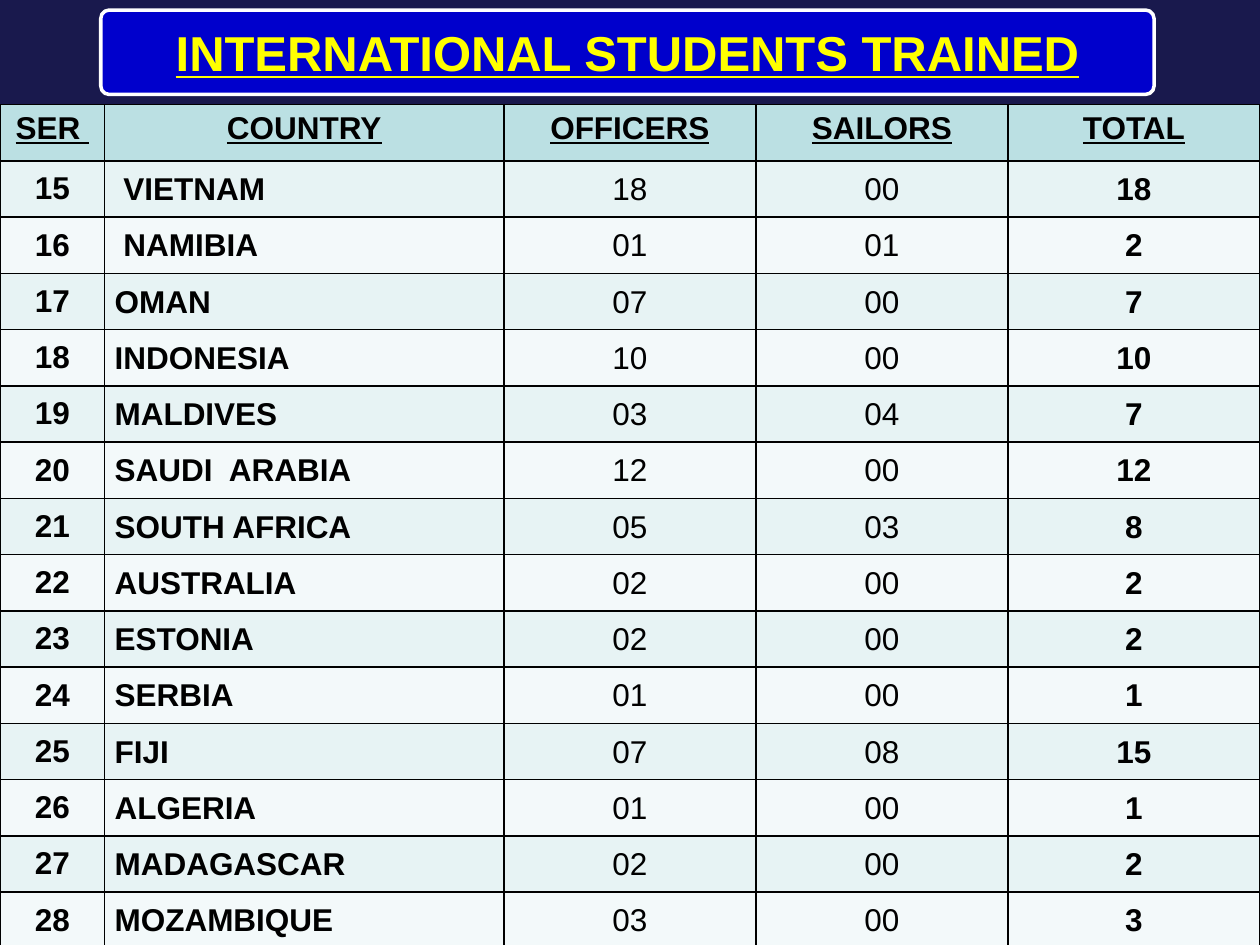
from lxml.etree import SubElement
from pptx import Presentation
from pptx.dml.color import RGBColor
from pptx.enum.shapes import MSO_SHAPE as Shape
from pptx.enum.text import MSO_ANCHOR as Anchor, PP_ALIGN as Align
from pptx.oxml.ns import qn
from pptx.util import Inches, Pt

HEADINGS = ["SER ", "COUNTRY", "OFFICERS", "SAILORS", "TOTAL"]
WIDTHS = [0.83, 3.17, 2, 2, 2]
TABLE_HEIGHT = 6.7
FIRST_SERIAL = 15
TRAINED = [
    (" VIETNAM", 18, 0),
    (" NAMIBIA", 1, 1),
    ("OMAN", 7, 0),
    ("INDONESIA", 10, 0),
    ("MALDIVES", 3, 4),
    ("SAUDI  ARABIA", 12, 0),
    ("SOUTH AFRICA", 5, 3),
    ("AUSTRALIA", 2, 0),
    ("ESTONIA", 2, 0),
    ("SERBIA", 1, 0),
    ("FIJI", 7, 8),
    ("ALGERIA", 1, 0),
    ("MADAGASCAR", 2, 0),
    ("MOZAMBIQUE", 3, 0),
]
HEADING_FILL = "BBE0E3"
BAND_FILLS = ["E7F3F4", "F3F9FA"]
TIGHT = {"margin_left": 0.01, "margin_right": 0.01, "margin_top": 0.01, "margin_bottom": 0}


def set_fill(target, color):
    """Give a shape, cell, line, font or background a solid colour."""
    target.fill.solid()
    target.fill.fore_color.rgb = RGBColor.from_string(color)


def write(frame, text, color="000000", align=Align.CENTER, **formats):
    """Write one formatted line of text into a frame and return its paragraph."""
    para = frame.paragraphs[0]
    para.alignment = align
    span = para.add_run()
    span.text = text
    values = {"name": "Arial", "size": Pt(18), "bold": True, "underline": False}
    for name, value in (values | formats).items():
        setattr(span.font, name, value)
    set_fill(span.font, color)
    return para


def add_borders(cell, color="000000", width=1):
    """Draw a thin line on all four sides of a cell."""
    properties = cell._tc.get_or_add_tcPr()
    for side in ("a:lnL", "a:lnR", "a:lnT", "a:lnB"):
        line = SubElement(properties, qn(side), w=str(Pt(width)))
        solid = SubElement(line, qn("a:solidFill"))
        SubElement(solid, qn("a:srgbClr"), val=color)


def add_title(page):
    """Add the rounded title box."""
    box = page.shapes.add_shape(Shape.ROUNDED_RECTANGLE, Inches(0.8), Inches(0.08), Inches(8.36), Inches(0.67))
    box.adjustments[0] = 0.1
    box.shadow.inherit = False
    set_fill(box, "0000CC")
    set_fill(box.line, "FFFFFF")
    box.line.width = Pt(2)
    box.text_frame.vertical_anchor = Anchor.MIDDLE
    write(box.text_frame, "INTERNATIONAL STUDENTS TRAINED", "FFFF00", size=Pt(28), underline=True)


def fill_heading(cells):
    """Write the underlined column headings."""
    for cell, heading in zip(cells, HEADINGS):
        add_borders(cell)
        set_fill(cell, HEADING_FILL)
        write(cell.text_frame, heading, underline=True)


def fill_country(cells, serial, country, officers, sailors, color):
    """Write one country with its counts and their total."""
    values = [str(serial), country, f"{officers:02}", f"{sailors:02}", str(officers + sailors)]
    for column, (cell, value) in enumerate(zip(cells, values)):
        add_borders(cell)
        set_fill(cell, color)
        cell.vertical_anchor = Anchor.MIDDLE
        if column > 0:
            for name, margin in TIGHT.items():
                setattr(cell, name, Inches(margin))
        heading = HEADINGS[column]
        align = Align.LEFT if heading == "COUNTRY" else Align.CENTER
        para = write(cell.text_frame, value, align=align, bold=heading not in ("OFFICERS", "SAILORS"))
        if heading == "COUNTRY":
            para._p.get_or_add_pPr().set("marL", str(Inches(0.07)))


def add_students_table(page):
    """Add the table of students by country."""
    count = len(TRAINED) + 1
    frame = page.shapes.add_table(count, len(HEADINGS), 0, Inches(0.83), Inches(10), Inches(TABLE_HEIGHT))
    table = frame.table
    for column, width in zip(table.columns, WIDTHS):
        column.width = Inches(width)
    for row in table.rows:
        row.height = Inches(TABLE_HEIGHT / count)
    heading_row, *country_rows = table.rows
    fill_heading(heading_row.cells)
    for index, (row, record) in enumerate(zip(country_rows, TRAINED)):
        fill_country(row.cells, FIRST_SERIAL + index, *record, BAND_FILLS[index % 2])


def main():
    """Build and save the deck."""
    deck = Presentation()
    deck.slide_width, deck.slide_height = Inches(10), Inches(7.5)
    page = deck.slides.add_slide(deck.slide_layouts[6])
    set_fill(page.background, "19194D")
    add_title(page)
    add_students_table(page)
    deck.save("out.pptx")


if __name__ == "__main__":
    main()
